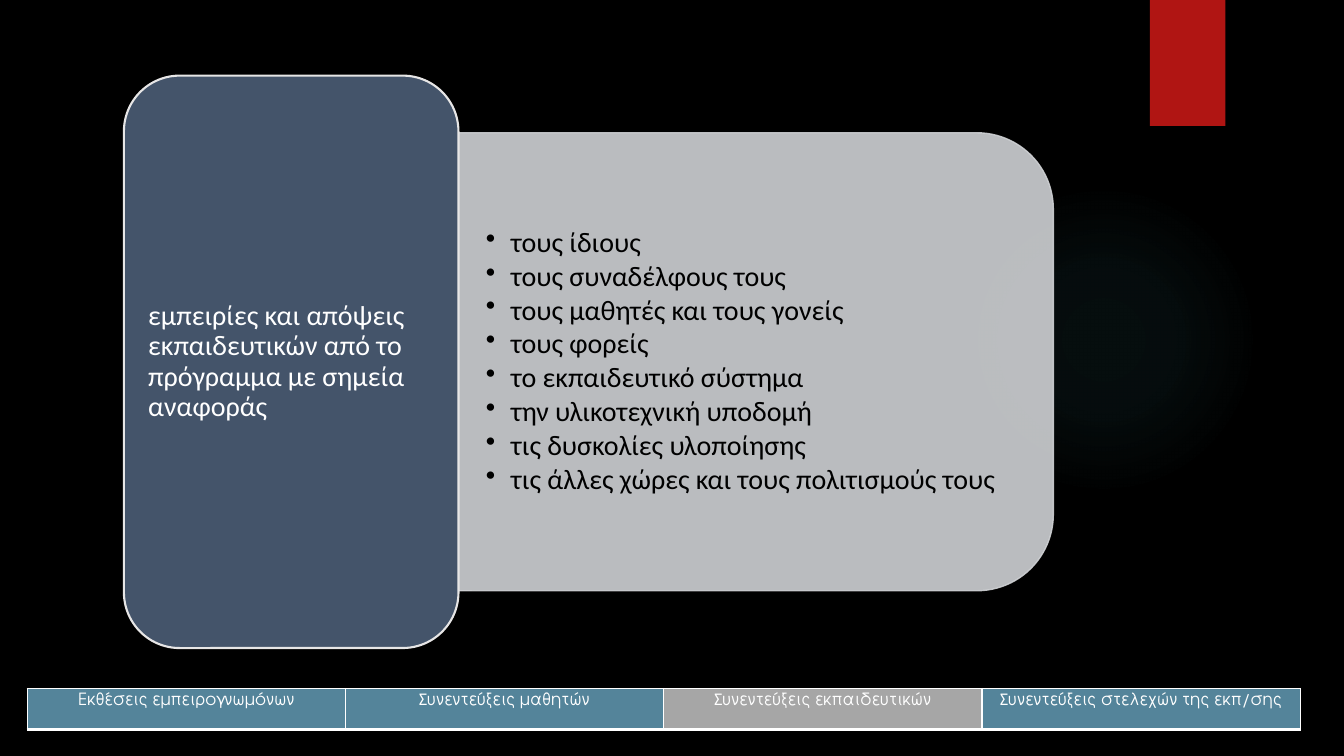
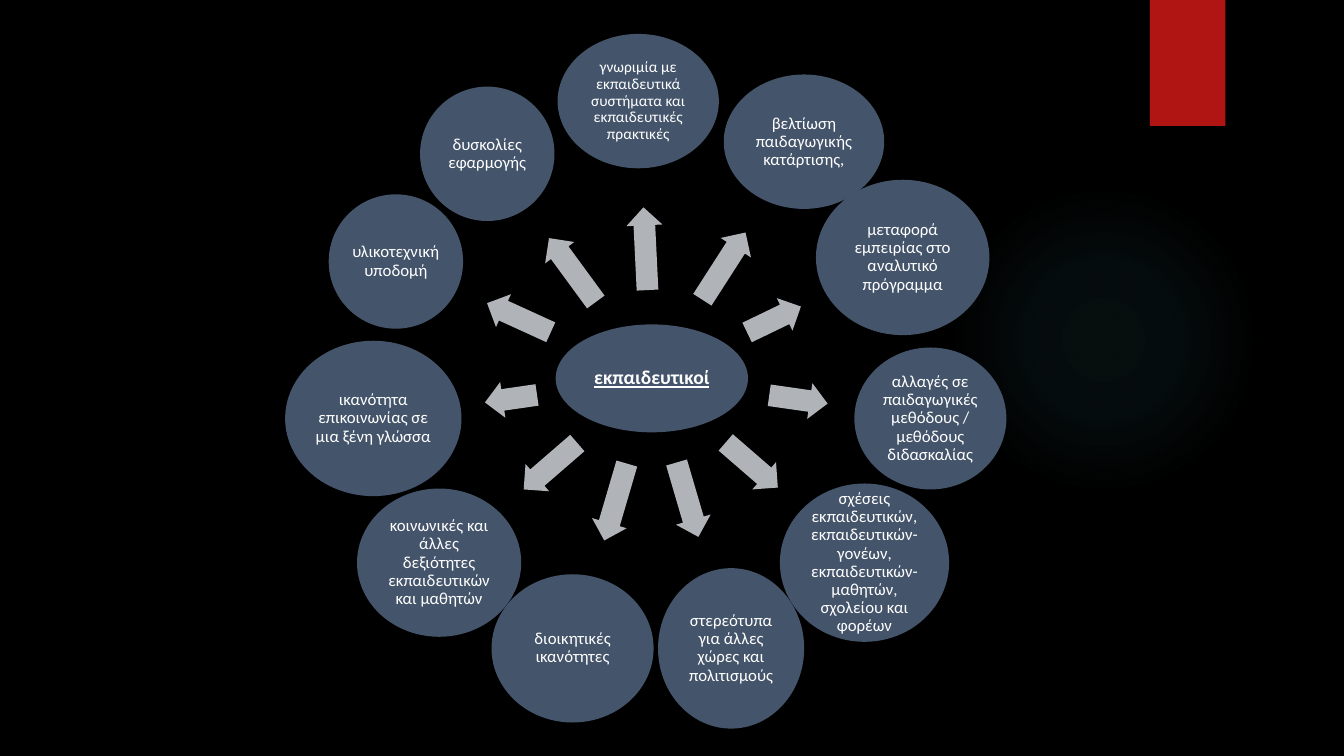
import math

from lxml import etree
from pptx import Presentation
from pptx.dml.color import RGBColor
from pptx.enum import shapes, text
from pptx.oxml import ns
from pptx.util import Inches, Pt

BLACK = RGBColor(0x00, 0x00, 0x00)
WHITE = RGBColor(0xFF, 0xFF, 0xFF)
RED = RGBColor(0xB0, 0x15, 0x13)
TEAL = RGBColor(0x50, 0xB9, 0xC1)
SLATE = RGBColor(0x44, 0x54, 0x6A)
PALE = RGBColor(0xE7, 0xE6, 0xE6)
SILVER = RGBColor(0xCF, 0xD1, 0xD4)
ARROW = RGBColor(0xB0, 0xB4, 0xB9)
TAB = RGBColor(0x54, 0x84, 0x9A)
TAB_ACTIVE = RGBColor(0xA6, 0xA6, 0xA6)

BODY_FONT = "Calibri"
TAB_FONT = "TeX Gyre Adventor"
COLUMNS = 32
SLIDE_W, SLIDE_H = Inches(13.333), Inches(7.5)
CELL = SLIDE_W / COLUMNS
KIND = shapes.MSO_SHAPE

EXPERIENCE = "εμπειρίες και απόψεις εκπαιδευτικών από το πρόγραμμα με σημεία αναφοράς"
REFERENCES = [
    "τους ίδιους",
    "τους συναδέλφους τους",
    "τους μαθητές και τους γονείς",
    "τους φορείς",
    "το εκπαιδευτικό σύστημα",
    "την υλικοτεχνική υποδομή",
    "τις δυσκολίες υλοποίησης",
    "τις άλλες χώρες και τους πολιτισμούς τους",
]
TABS = [
    "Εκθέσεις εμπειρογνωμόνων",
    "Συνεντεύξεις μαθητών",
    "Συνεντεύξεις εκπαιδευτικών",
    "Συνεντεύξεις στελεχών της εκπ/σης",
]
BUBBLES = [
    ("γνωριμία με εκπαιδευτικά συστήματα και εκπαιδευτικές πρακτικές", 3.84, 3.2, -0.09, -2.8),
    ("βελτίωση παιδαγωγικής κατάρτισης,", 3.82, 3.2, 0, 0),
    ("μεταφορά εμπειρίας στο αναλυτικό πρόγραμμα", 4.13, 3.7, -0.07, -1.2),
    ("αλλαγές σε παιδαγωγικές μεθόδους / μεθόδους διδασκαλίας", 3.62, 3.38, 0, 0),
    ("σχέσεις εκπαιδευτικών, εκπαιδευτικών-γονέων, εκπαιδευτικών-μαθητών, "
     "σχολείου και φορέων", 4.03, 3.77, 0, 0),
    ("στερεότυπα για άλλες χώρες και πολιτισμούς", 3.48, 3.82, 0, 0),
    ("διοικητικές ικανότητες", 3.86, 3.53, 0, 0),
    ("κοινωνικές και άλλες δεξιότητες εκπαιδευτικών και μαθητών", 3.91, 3.53, 0, 0),
    ("ικανότητα επικοινωνίας σε μια ξένη γλώσσα", 4.2, 3.7, 0, 0),
    ("υλικοτεχνική υποδομή", 3.2, 3.2, 0, 0),
    ("δυσκολίες εφαρμογής", 3.2, 3.2, -0.07, -3.5),
]


def cells(*values):
    return [round(v * CELL) for v in values]


def centred(cx, cy, w, h):
    return cx - w / 2, cy - h / 2, w, h


def add_shape(s, kind, box, fill, line=None, width=1):
    sp = s.shapes.add_shape(kind, *cells(*box))
    sp.shadow.inherit = False
    sp.fill.solid()
    sp.fill.fore_color.rgb = fill
    if line is None:
        sp.line.fill.background()
    else:
        sp.line.color.rgb = line
        sp.line.width = Pt(width)
    return sp


def write(tf, lines, size=12, color=WHITE, font=BODY_FONT, align=text.PP_ALIGN.CENTER,
          bold=False, underline=False, spacing=0.9, after=0, bullet=False):
    for i, line in enumerate(lines):
        p = tf.paragraphs[0] if i == 0 else tf.add_paragraph()
        p.alignment = align
        p.line_spacing = spacing
        p.space_after = Pt(after)
        if bullet:
            pPr = p._p.get_or_add_pPr()
            pPr.set("marL", str(Inches(0.25)))
            pPr.set("indent", str(-Inches(0.25)))
            etree.SubElement(pPr, ns.qn("a:buChar"), char="•")
        r = p.add_run()
        r.text = line
        r.font.name = font
        r.font.size = Pt(size)
        r.font.color.rgb = color
        r.font.bold = bold
        r.font.underline = underline


def fit_frame(tf, dx, dy):
    tf.word_wrap = True
    tf.vertical_anchor = text.MSO_ANCHOR.MIDDLE
    tf.margin_left, tf.margin_top, tf.margin_right, tf.margin_bottom = cells(dx, dy, dx, dy)
    return tf


def set_alpha(parent, percent):
    for clr in parent.iter(ns.qn("a:srgbClr")):
        etree.SubElement(clr, ns.qn("a:alpha"), val=str(percent * 1000))


def add_glow(s, box):
    sp = add_shape(s, KIND.OVAL, box, TEAL)
    solid = sp._element.spPr.find(ns.qn("a:solidFill"))
    grad = etree.Element(ns.qn("a:gradFill"), rotWithShape="1")
    stops = etree.SubElement(grad, ns.qn("a:gsLst"))
    for pos, alpha in ((0, 7), (36, 6), (69, 0)):
        gs = etree.SubElement(stops, ns.qn("a:gs"), pos=str(pos * 1000))
        etree.SubElement(gs, ns.qn("a:srgbClr"), val=str(TEAL))
        set_alpha(gs, alpha)
    circle = etree.SubElement(grad, ns.qn("a:path"), path="circle")
    etree.SubElement(circle, ns.qn("a:fillToRect"), l="50000", t="50000", r="50000", b="50000")
    solid.getparent().replace(solid, grad)


def add_base_slide(prs):
    s = prs.slides.add_slide(prs.slide_layouts[6])
    add_glow(s, (22.58, 4.39, 7.39, 7.39))
    add_shape(s, KIND.RECTANGLE, (27.38, 0, 1.8, 3), RED)
    return s


def add_card(s, box):
    x, y, w, h = box
    side_w, panel_h = 0.36 * w, 0.8 * h
    panel_w, panel_y = w - side_w, y + (h - panel_h) / 2

    upright = centred(x + side_w + panel_w / 2, y + h / 2, panel_h, panel_w)
    panel = add_shape(s, KIND.ROUND_2_SAME_RECTANGLE, upright, SILVER, line=SILVER)
    panel.rotation = 90
    set_alpha(panel._element.spPr, 90)
    tb = s.shapes.add_textbox(*cells(x + side_w, panel_y, panel_w, panel_h))
    write(fit_frame(tb.text_frame, 0.65, 0.34), REFERENCES, size=20, color=BLACK,
          align=text.PP_ALIGN.LEFT, after=2.6, bullet=True)

    side = add_shape(s, KIND.ROUNDED_RECTANGLE, (x, y, side_w, h), SLATE, line=PALE, width=1.5)
    write(fit_frame(side.text_frame, 0.19, 0.1), [EXPERIENCE], size=20,
          align=text.PP_ALIGN.LEFT)


def set_borders(cell):
    tcPr = cell._tc.get_or_add_tcPr()
    for i, (tag, width) in enumerate((("lnL", 1), ("lnR", 1), ("lnT", 1), ("lnB", 3))):
        ln = etree.Element(ns.qn("a:" + tag), w=str(Pt(width)))
        fill = etree.SubElement(ln, ns.qn("a:solidFill"))
        etree.SubElement(fill, ns.qn("a:srgbClr"), val=str(WHITE))
        tcPr.insert(i, ln)


def add_tabs(s, box, active):
    table = s.shapes.add_table(1, len(TABS), *cells(*box)).table
    for i, label in enumerate(TABS):
        cell = table.cell(0, i)
        cell.fill.solid()
        cell.fill.fore_color.rgb = TAB_ACTIVE if i == active else TAB
        set_borders(cell)
        write(cell.text_frame, [label], font=TAB_FONT, spacing=1)


def add_bubble(s, box, label, **style):
    sp = add_shape(s, KIND.OVAL, box, SLATE)
    write(fit_frame(sp.text_frame, 0.05, 0.05), [label], **style)


def edge_distance(w, h, angle):
    return 1 / math.hypot(2 * math.cos(angle) / w, 2 * math.sin(angle) / h)


def add_ring(s, box, radius=6.7, hub_size=(4.58, 2.57)):
    x, y, w, h = box
    cx, cy = x + w / 2, y + h / 2
    add_bubble(s, centred(cx, cy, *hub_size), "εκπαιδευτικοί",
               size=14, bold=True, underline=True)
    for i, (label, bw, bh, shift, turn) in enumerate(BUBBLES):
        degrees = i * 360 / len(BUBBLES) - 90 + turn
        angle = math.radians(degrees)
        ux, uy = math.cos(angle), math.sin(angle)
        reach = radius + shift
        start = edge_distance(*hub_size, angle)
        gap = reach - edge_distance(bw, bh, angle) - start
        middle = start + 0.485 * gap
        arrow = add_shape(s, KIND.RIGHT_ARROW,
                          centred(cx + middle * ux, cy + middle * uy, 0.53 * gap, 0.86), ARROW)
        arrow.adjustments[0] = 0.6
        arrow.adjustments[1] = 0.5
        arrow.rotation = degrees % 360
        add_bubble(s, centred(cx + reach * ux, cy + reach * uy, bw, bh), label,
                   size=11 if i == 0 else 12)


def main():
    prs = Presentation()
    prs.slide_width, prs.slide_height = SLIDE_W, SLIDE_H
    background = prs.slide_master.background.fill
    background.solid()
    background.fore_color.rgb = BLACK

    s = add_base_slide(prs)
    add_card(s, (2.95, 1.8, 22.13, 13.63))
    add_tabs(s, (0.65, 16.39, 30.31, 0.98), active=2)

    s = add_base_slide(prs)
    add_ring(s, (6.8, 0.82, 17.44, 16.38))
    prs.save("out.pptx")


if __name__ == "__main__":
    main()
